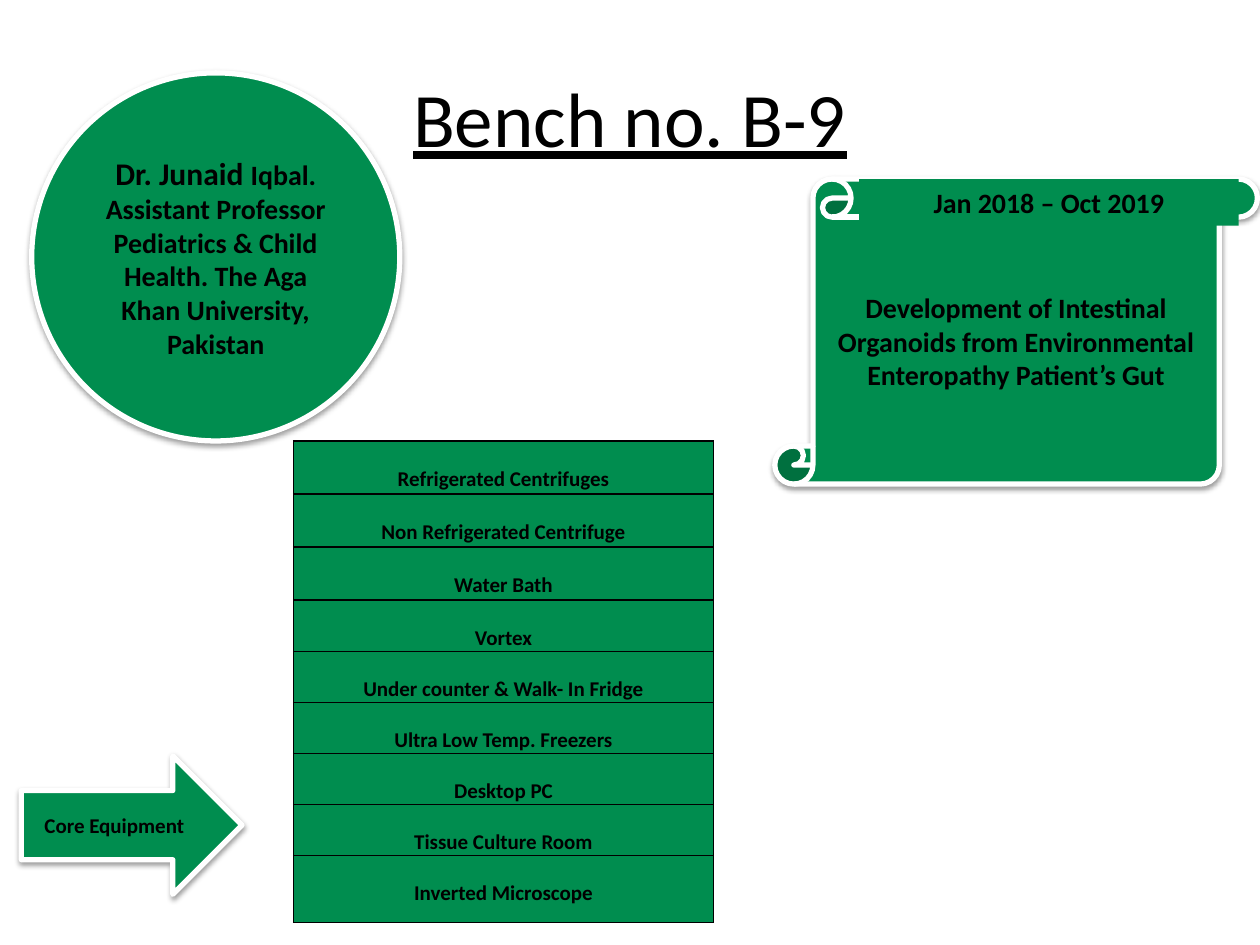
from lxml.etree import SubElement
from pptx import Presentation
from pptx.dml.color import RGBColor
from pptx.enum.shapes import MSO_SHAPE
from pptx.enum.text import MSO_ANCHOR, PP_ALIGN
from pptx.oxml import parse_xml
from pptx.oxml.ns import nsdecls, qn
from pptx.util import Cm, Pt

GREEN, WHITE, BLACK = "008D4F", "FFFFFF", "000000"


def paint(fill, color):
    fill.solid()
    fill.fore_color.rgb = RGBColor.from_string(color)


def write(frame, text, size, bold=True, anchor=MSO_ANCHOR.MIDDLE):
    """Fill the frame with one centred black paragraph and return it."""
    frame.word_wrap = True
    frame.vertical_anchor = anchor
    paragraph = frame.paragraphs[0]
    paragraph.text = text
    paragraph.alignment = PP_ALIGN.CENTER
    font = paragraph.font
    font.name, font.size, font.bold = "Calibri", Pt(size), bold
    font.color.rgb = RGBColor.from_string(BLACK)
    return paragraph


prs = Presentation()
prs.slide_width, prs.slide_height = Cm(25.4), Cm(19.05)
slide = prs.slides.add_slide(prs.slide_layouts[6])
shapes = slide.shapes

title = shapes.add_textbox(Cm(1.27), Cm(0.76), Cm(22.86), Cm(3.18))
heading = write(title.text_frame, "Bench no. B-9", 44, bold=False)
heading.font.underline = True

# Researcher, project and equipment label: green with white outline and shadow
panels = [
    (MSO_SHAPE.OVAL, 0.64, 1.47, 7.42, 7.42, 16,
     "Iqbal. Assistant Professor Pediatrics & Child Health. "
     "The Aga Khan University, Pakistan"),
    (MSO_SHAPE.VERTICAL_SCROLL, 15.62, 3.61, 9.73, 6.15, 16,
     "Development of Intestinal Organoids from Environmental "
     "Enteropathy Patient’s Gut"),
    (MSO_SHAPE.RIGHT_ARROW, 0.43, 15.24, 4.45, 2.79, 12, "Core Equipment"),
]
for kind, left, top, width, height, size, text in panels:
    panel = shapes.add_shape(kind, Cm(left), Cm(top), Cm(width), Cm(height))
    paint(panel.fill, GREEN)
    paint(panel.line.fill, WHITE)
    panel.line.width = Pt(3)
    panel.shadow.inherit = False
    effects = panel.element.spPr.find(qn("a:effectLst"))
    effects.append(parse_xml(
        f'<a:outerShdw {nsdecls("a")} blurRad="40000" dist="20000" dir="5400000" '
        f'rotWithShape="0"><a:srgbClr val="{BLACK}"><a:alpha val="38000"/>'
        '</a:srgbClr></a:outerShdw>'))
    paragraph = write(panel.text_frame, text, size)
    if kind == MSO_SHAPE.OVAL:
        paragraph.runs[0].text = "Dr. Junaid "
        paragraph.runs[0].font.size = Pt(18)
        paragraph.add_run().text = text

equipment = [
    "Refrigerated Centrifuges", "Non Refrigerated Centrifuge", "Water Bath",
    "Vortex", "Under counter & Walk- In Fridge", "Ultra Low Temp. Freezers",
    "Desktop PC", "Tissue Culture Room", "Inverted Microscope",
]
row_heights = [1.07] * 3 + [1.03] * 5 + [1.35]
table = shapes.add_table(len(equipment), 1, Cm(5.92), Cm(8.89),
                         Cm(8.46), Cm(sum(row_heights))).table
table.first_row = table.horz_banding = False
for row, item, height in zip(table.rows, equipment, row_heights):
    row.height = Cm(height)
    cell = row.cells[0]
    cell.margin_left = cell.margin_right = Cm(0.18)
    cell.margin_top, cell.margin_bottom = Cm(0.51), 0
    write(cell.text_frame, item, 12)
    cell.vertical_anchor = MSO_ANCHOR.TOP
    properties = cell._tc.get_or_add_tcPr()
    for side in ("lnL", "lnR", "lnT", "lnB"):
        border = SubElement(properties, qn(f"a:{side}"), w=str(Pt(1)))
        border_fill = SubElement(border, qn("a:solidFill"))
        SubElement(border_fill, qn("a:srgbClr"), val=BLACK)
    paint(cell.fill, GREEN)

period = shapes.add_shape(MSO_SHAPE.RECTANGLE, Cm(17.32), Cm(3.61), Cm(7.65), Cm(0.94))
paint(period.fill, GREEN)
period.line.fill.background()
period.shadow.inherit = False
write(period.text_frame, "Jan 2018 – Oct 2019", 16, anchor=MSO_ANCHOR.TOP)

prs.save("out.pptx")
